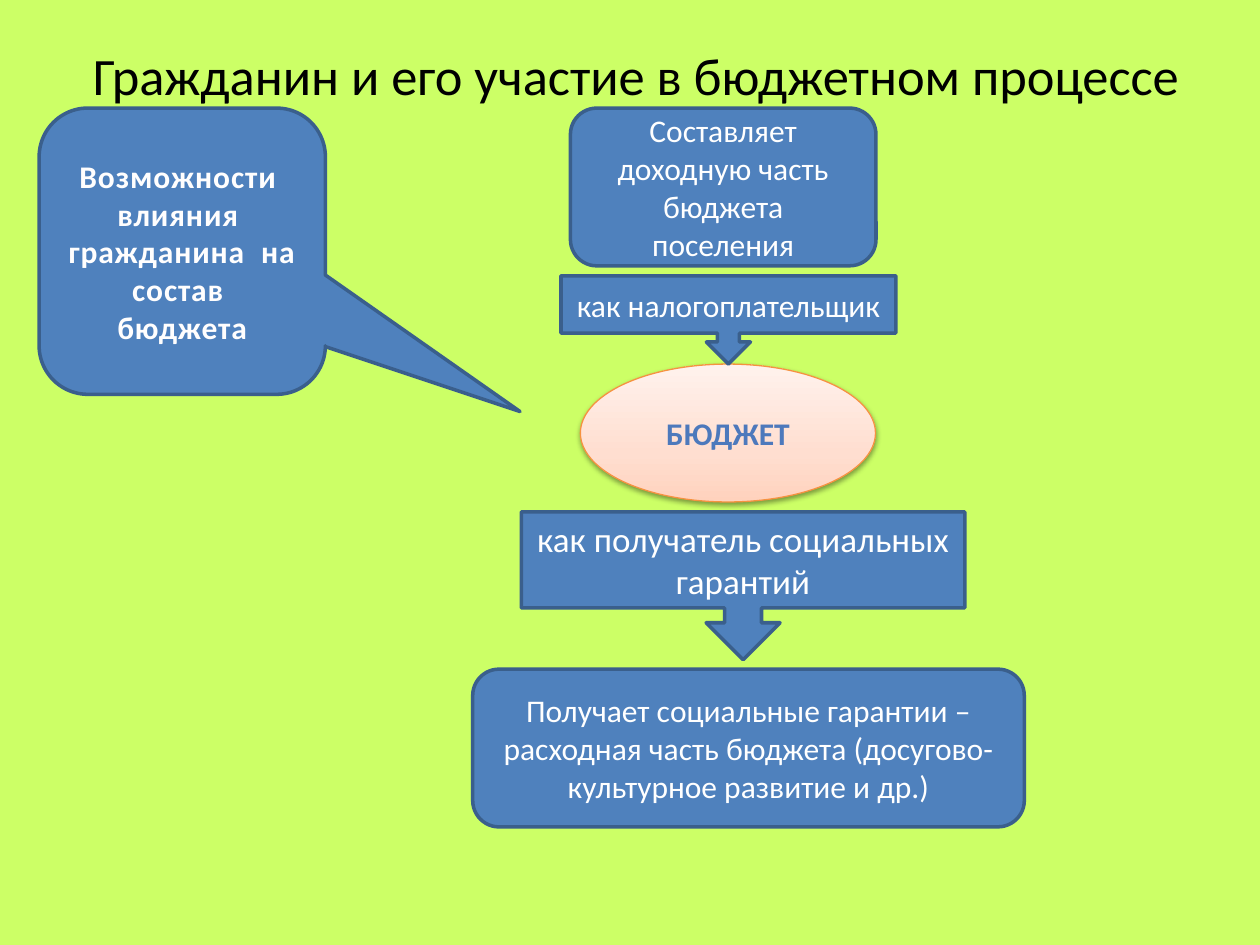
import pptx
import pptx.util
import pptx.oxml
import pptx.oxml.ns
import pptx.dml.color
import pptx.enum.shapes
import pptx.enum.text

Cm, Pt = pptx.util.Cm, pptx.util.Pt
RGB = pptx.dml.color.RGBColor.from_string
KIND = pptx.enum.shapes.MSO_SHAPE
qn = pptx.oxml.ns.qn
NS = pptx.oxml.ns.nsdecls("a")

theme = {
    "font": "Calibri",
    "back": "CCFF66", "title": "000000", "box": "4F81BD", "edge": "3A5F8C",
    "text": "FFFFFF", "bold": "FFFEFE", "glow": "E78738", "rim": "F69240",
    "oval": [(0, "FFD2BD"), (35, "FFDED0"), (100, "FFF2ED")],
    "word": [(0, "7494C9"), (49, "4D79BC"), (50, "346AAA"),
             (92, "325F94"), (100, "315D91")],
    "head": 30, "large": 20, "body": 18,
}


def blend(fill, node, stops, angle):
    """Give a fill a linear gradient with any number of stops."""
    fill.gradient()
    marks = "".join(f'<a:gs pos="{pos * 1000}"><a:srgbClr val="{tone}"/></a:gs>'
                    for pos, tone in stops)
    new = pptx.oxml.parse_xml(
        f'<a:gradFill {NS} rotWithShape="1"><a:gsLst>{marks}</a:gsLst>'
        f'<a:lin ang="{angle * 60000}" scaled="0"/></a:gradFill>')
    node.replace(node.find(qn("a:gradFill")), new)


def write(shape, text, size, tone, bold=False):
    """Put one centred run in a shape and return the run."""
    frame = shape.text_frame
    frame.word_wrap = True
    frame.auto_size = pptx.enum.text.MSO_AUTO_SIZE.NONE
    frame.vertical_anchor = pptx.enum.text.MSO_ANCHOR.MIDDLE
    line = frame.paragraphs[0]
    line.alignment = pptx.enum.text.PP_ALIGN.CENTER
    run = line.add_run()
    run.text = text
    style = {"name": theme["font"], "size": Pt(size), "bold": bold}
    for key, value in style.items():
        setattr(run.font, key, value)
    run.font.color.rgb = RGB(tone)
    return run


deck = pptx.Presentation()
deck.slide_width, deck.slide_height = Cm(25.4), Cm(19.05)
slide = deck.slides.add_slide(deck.slide_layouts[5])
slide.background.fill.solid()
slide.background.fill.fore_color.rgb = RGB(theme["back"])

# Title
title = slide.shapes.title
place = {"left": 1.4, "top": 0.58, "width": 22.86, "height": 1.83}
for key, value in place.items():
    setattr(title, key, Cm(value))
write(title, "Гражданин и его участие в бюджетном процессе",
      theme["head"], theme["title"])

# Budget oval
oval = slide.shapes.add_shape(KIND.OVAL, Cm(11.7), Cm(7.34), Cm(5.95), Cm(2.78))
blend(oval.fill, oval._element.spPr, theme["oval"], 270)
oval.line.color.rgb = RGB(theme["rim"])
oval.line.width = Pt(0.75)
oval.shadow.inherit = False
oval._element.spPr.find(qn("a:effectLst")).append(pptx.oxml.parse_xml(
    f'<a:outerShdw {NS} blurRad="{Pt(3.1)}" dist="{Pt(1.6)}" dir="5400000" '
    'rotWithShape="0"><a:srgbClr val="000000"><a:alpha val="38000"/>'
    '</a:srgbClr></a:outerShdw>'))
word = write(oval, "БЮДЖЕТ", theme["body"], theme["box"], True)
blend(word.font.fill, word._r.get_or_add_rPr(), theme["word"], 90)

# Blue boxes: kind, left, top, width, height, size, text
boxes = [
    (KIND.DOWN_ARROW_CALLOUT, 10.51, 10.32, 8.94, 2.98, theme["large"],
     "как получатель социальных гарантий"),
    (KIND.ROUNDED_RECTANGLE, 11.5, 2.18, 6.16, 3.18, theme["body"],
     "Составляет доходную часть бюджета поселения"),
    (KIND.ROUNDED_RECTANGULAR_CALLOUT, 0.79, 2.18, 5.77, 5.77, theme["body"],
     "Возможности  влияния  гражданина  на состав  бюджета"),
    (KIND.DOWN_ARROW_CALLOUT, 11.31, 5.56, 6.75, 1.78, theme["body"],
     "как налогоплательщик "),
    (KIND.ROUNDED_RECTANGLE, 9.53, 13.49, 11.12, 3.18, theme["body"],
     "Получает социальные гарантии – расходная часть бюджета "
     "(досугово-культурное развитие и др.)"),
]
for kind, left, top, width, height, size, text in boxes:
    box = slide.shapes.add_shape(kind, Cm(left), Cm(top), Cm(width), Cm(height))
    box.shadow.inherit = False
    box.fill.solid()
    box.fill.fore_color.rgb = RGB(theme["box"])
    box.line.color.rgb = RGB(theme["edge"])
    box.line.width = Pt(2)
    call = kind == KIND.ROUNDED_RECTANGULAR_CALLOUT
    run = write(box, text, size, theme["bold" if call else "text"], call)

    # Speech bubble: pointer, spaced and outlined letters with a shadow
    if call:
        for spot, value in enumerate((1.18, 0.56, 0.17)):
            box.adjustments[spot] = value
        props = run._r.get_or_add_rPr()
        props.set("spc", "50")
        props.insert(0, pptx.oxml.parse_xml(
            f'<a:ln {NS} w="{Pt(1)}"><a:solidFill>'
            f'<a:srgbClr val="{theme["glow"]}"/></a:solidFill></a:ln>'))
        props.find(qn("a:latin")).addprevious(pptx.oxml.parse_xml(
            f'<a:effectLst {NS}><a:outerShdw blurRad="{Pt(3)}" dist="{Pt(1)}" '
            'dir="5400000"><a:srgbClr val="000000"><a:alpha val="40000"/>'
            '</a:srgbClr></a:outerShdw></a:effectLst>'))

deck.save("out.pptx")
